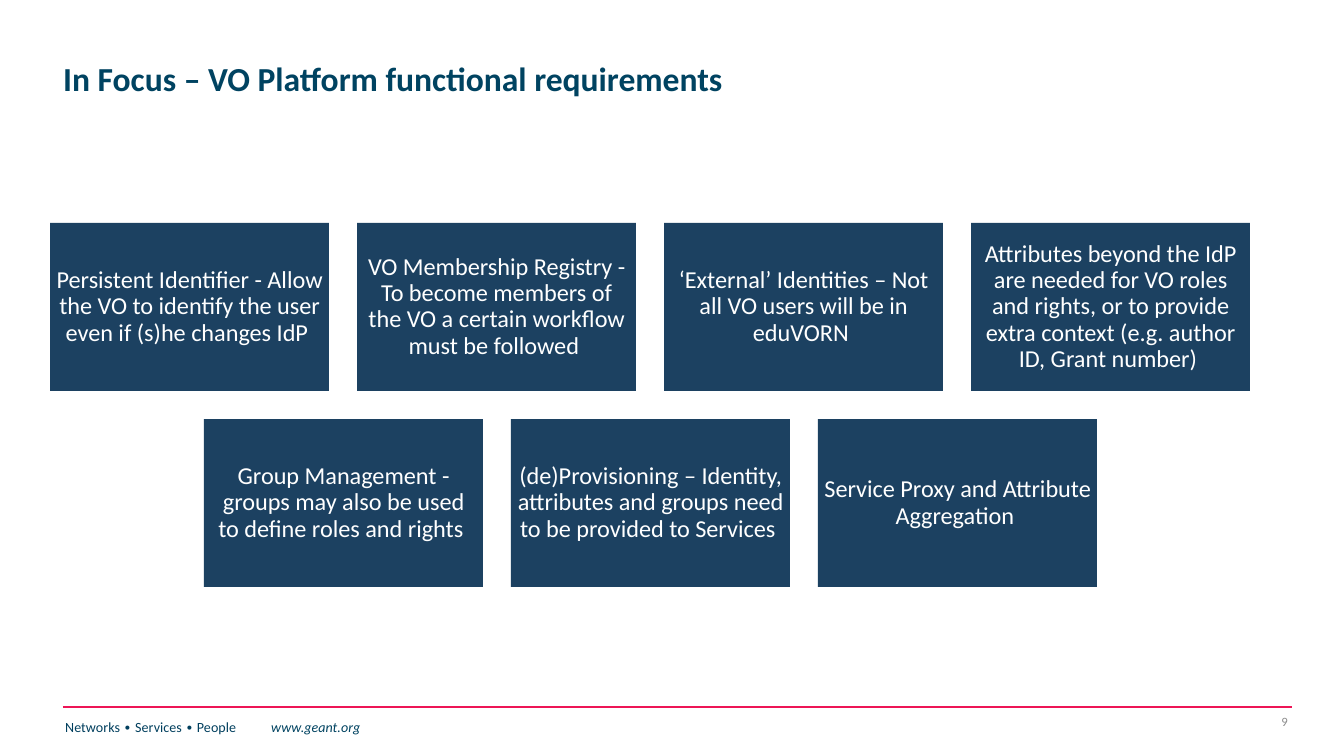
"""Build the slide on functional requirements of the VO platform."""

from typing import NamedTuple

from lxml.etree import SubElement
from pptx import Presentation
from pptx.dml.color import RGBColor
from pptx.enum.shapes import MSO_CONNECTOR, MSO_SHAPE
from pptx.enum.text import MSO_ANCHOR, PP_ALIGN
from pptx.oxml.ns import qn
from pptx.shapes.base import BaseShape
from pptx.slide import Slide
from pptx.util import Emu, Pt

EMU_PER_PX = 9_144_000 / 1344
SLIDE_WIDTH, SLIDE_HEIGHT = 1344, 756

NAVY = RGBColor(0x1C, 0x41, 0x61)
TEAL = RGBColor(0x00, 0x43, 0x61)
FOOTER_BLUE = RGBColor(0x00, 0x3F, 0x5E)
CRIMSON = RGBColor(0xED, 0x15, 0x56)
GRAY = RGBColor(0x8C, 0x8C, 0x8C)
WHITE = RGBColor(0xFF, 0xFF, 0xFF)
FONT = "Calibri"

CARD_WIDTH, CARD_HEIGHT, CARD_GAP, CARD_INSET = 279, 168, 28, 6
GRID_CENTER, GRID_TOP = 650, 223
FOOTER_TAB = 206

CARD_ROWS = [
    [
        "Persistent Identifier - Allow the VO to identify the user even if (s)he changes IdP ",
        "VO Membership Registry - To become members of the VO a certain workflow must be followed ",
        "‘External’ Identities – Not all VO users will be in eduVORN ",
        "Attributes beyond the IdP are needed for VO roles and rights, "
        "or to provide extra context (e.g. author ID, Grant number) ",
    ],
    [
        "Group Management - groups may also be used to define roles and rights ",
        "(de)Provisioning – Identity, attributes and groups need to be provided to Services ",
        "Service Proxy and Attribute Aggregation ",
    ],
]


class Box(NamedTuple):
    left: int
    top: int
    width: int
    height: int


class TextRun(NamedTuple):
    text: str
    size: float
    color: RGBColor
    bold: bool = False
    italic: bool = False


def px(length: int) -> Emu:
    """Turn pixels into EMU."""
    return Emu(round(length * EMU_PER_PX))


def write(
    shape: BaseShape,
    runs: list[TextRun],
    alignment: PP_ALIGN = PP_ALIGN.LEFT,
    anchor: MSO_ANCHOR = MSO_ANCHOR.MIDDLE,
    line_spacing: float = 1.0,
    tab: int | None = None,
) -> None:
    """Fill a shape with one paragraph of styled runs."""
    frame = shape.text_frame
    frame.word_wrap = True
    frame.vertical_anchor = anchor
    paragraph = frame.paragraphs[0]
    paragraph.alignment = alignment
    paragraph.line_spacing = line_spacing
    if tab is not None:
        tab_list = SubElement(paragraph._p.get_or_add_pPr(), qn("a:tabLst"))
        SubElement(tab_list, qn("a:tab"), pos=str(px(tab)), algn="l")
    for item in runs:
        run = paragraph.add_run()
        run.text = item.text
        run.font.name = FONT
        run.font.size = Pt(item.size)
        run.font.bold = item.bold
        run.font.italic = item.italic
        run.font.color.rgb = item.color


def add_text_box(slide: Slide, box: Box) -> BaseShape:
    """Add an empty text box."""
    return slide.shapes.add_textbox(*map(px, box))


def add_card(slide: Slide, box: Box, text: str) -> None:
    """Add one requirement card."""
    card = slide.shapes.add_shape(MSO_SHAPE.RECTANGLE, *map(px, box))
    card.shadow.inherit = False
    card.fill.solid()
    card.fill.fore_color.rgb = NAVY
    card.line.fill.background()
    frame = card.text_frame
    frame.margin_left = frame.margin_right = px(CARD_INSET)
    frame.margin_top = frame.margin_bottom = px(CARD_INSET)
    write(card, [TextRun(text, 13, WHITE)], PP_ALIGN.CENTER, line_spacing=0.9)


def add_card_grid(slide: Slide) -> None:
    """Add the rows of cards, each row centred."""
    for row, texts in enumerate(CARD_ROWS):
        row_width = len(texts) * (CARD_WIDTH + CARD_GAP) - CARD_GAP
        left = GRID_CENTER - row_width // 2
        top = GRID_TOP + row * (CARD_HEIGHT + CARD_GAP)
        for column, text in enumerate(texts):
            card_left = left + column * (CARD_WIDTH + CARD_GAP)
            add_card(slide, Box(card_left, top, CARD_WIDTH, CARD_HEIGHT), text)


def add_footer(slide: Slide) -> None:
    """Add the footer rule, the tagline and the page number."""
    rule = slide.shapes.add_connector(
        MSO_CONNECTOR.STRAIGHT, px(63), px(707), px(1292), px(707)
    )
    rule.line.color.rgb = CRIMSON
    rule.line.width = Pt(1)
    SubElement(rule._element.spPr, qn("a:effectLst"))
    tagline = [
        TextRun("Networks ∙ Services ∙ People\t", 7.5, FOOTER_BLUE),
        TextRun("www.geant.org", 7.5, TEAL, italic=True),
    ]
    write(
        add_text_box(slide, Box(52, 712, 458, 47)),
        tagline,
        anchor=MSO_ANCHOR.TOP,
        tab=FOOTER_TAB,
    )
    page_number = add_text_box(slide, Box(1219, 706, 82, 31))
    write(page_number, [TextRun("9", 6.8, GRAY)], PP_ALIGN.RIGHT)


def main() -> None:
    """Build and save the presentation."""
    presentation = Presentation()
    presentation.slide_width = px(SLIDE_WIDTH)
    presentation.slide_height = px(SLIDE_HEIGHT)
    slide = presentation.slides.add_slide(presentation.slide_layouts[6])
    add_footer(slide)
    add_card_grid(slide)
    title = TextRun("In Focus – VO Platform functional requirements", 18, TEAL, bold=True)
    write(add_text_box(slide, Box(50, 8, 1059, 146)), [title], line_spacing=0.9)
    presentation.save("out.pptx")


if __name__ == "__main__":
    main()
